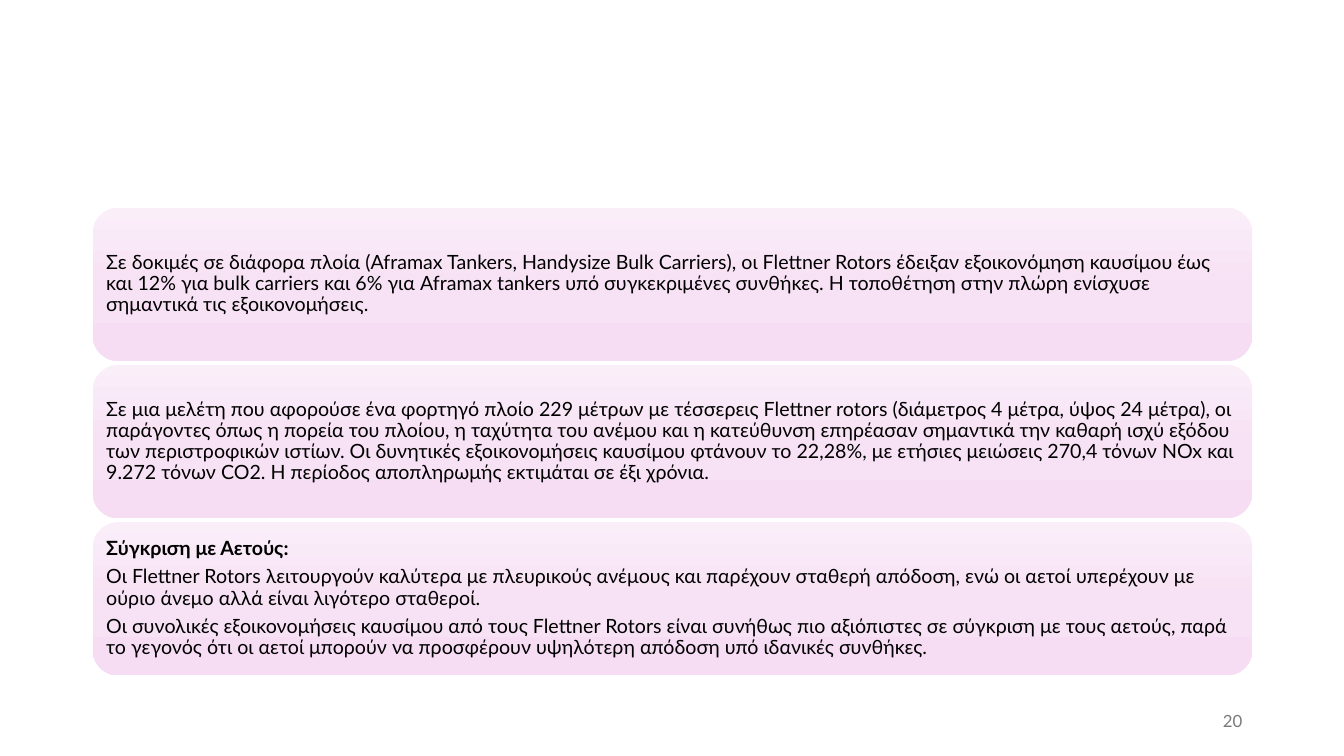
from copy import deepcopy

from pptx import Presentation
from pptx.dml.color import RGBColor
from pptx.enum.shapes import MSO_SHAPE
from pptx.enum.text import MSO_ANCHOR, PP_ALIGN
from pptx.oxml.ns import qn
from pptx.util import Inches, Pt

PANELS = [
    ["Σε δοκιμές σε διάφορα πλοία (Aframax Tankers, Handysize Bulk Carriers), οι Flettner Rotors "
     "έδειξαν εξοικονόμηση καυσίμου έως και 12% για bulk carriers και 6% για Aframax tankers υπό "
     "συγκεκριμένες συνθήκες. Η τοποθέτηση στην πλώρη ενίσχυσε σημαντικά τις εξοικονομήσεις."],
    ["Σε μια μελέτη που αφορούσε ένα φορτηγό πλοίο 229 μέτρων με τέσσερεις Flettner rotors "
     "(διάμετρος 4 μέτρα, ύψος 24 μέτρα), οι παράγοντες όπως η πορεία του πλοίου, η ταχύτητα του "
     "ανέμου και η κατεύθυνση επηρέασαν σημαντικά την καθαρή ισχύ εξόδου των περιστροφικών ιστίων. "
     "Οι δυνητικές εξοικονομήσεις καυσίμου φτάνουν το 22,28%, με ετήσιες μειώσεις 270,4 τόνων NOx "
     "και 9.272 τόνων CO2. Η περίοδος αποπληρωμής εκτιμάται σε έξι χρόνια."],
    ["Σύγκριση με Αετούς:",
     "Οι Flettner Rotors λειτουργούν καλύτερα με πλευρικούς ανέμους και παρέχουν σταθερή απόδοση, "
     "ενώ οι αετοί υπερέχουν με ούριο άνεμο αλλά είναι λιγότερο σταθεροί.",
     "Οι συνολικές εξοικονομήσεις καυσίμου από τους Flettner Rotors είναι συνήθως πιο αξιόπιστες "
     "σε σύγκριση με τους αετούς, παρά το γεγονός ότι οι αετοί μπορούν να προσφέρουν υψηλότερη "
     "απόδοση υπό ιδανικές συνθήκες."],
]


def rgb(value):
    return RGBColor.from_string(value)


class SlideBuilder:
    font = "Lato"
    gradient = [(0, "FAEEF9"), (0.5, "F7E1F4"), (1, "F6DDF4")]

    def __init__(self, s):
        self.s = s

    def style(self, p, size, color, bold=False):
        for r in p.runs:
            r.font.name = self.font
            r.font.size = Pt(size)
            r.font.bold = bold
            r.font.color.rgb = rgb(color)

    def fill_gradient(self, sp):
        sp.fill.gradient()
        sp.fill.gradient_angle = 270
        stops = sp._element.spPr.find(".//" + qn("a:gsLst"))
        stops.insert(1, deepcopy(stops[0]))
        for stop, (position, color) in zip(sp.fill.gradient_stops, self.gradient):
            stop.position = position
            stop.color.rgb = rgb(color)

    def panel(self, x, y, w, h, paragraphs):
        sp = self.s.shapes.add_shape(MSO_SHAPE.ROUNDED_RECTANGLE,
                                     Inches(x), Inches(y), Inches(w), Inches(h))
        sp.shadow.inherit = False
        sp.line.fill.background()
        self.fill_gradient(sp)
        tf = sp.text_frame
        tf.word_wrap = True
        tf.vertical_anchor = MSO_ANCHOR.MIDDLE
        tf.margin_left = tf.margin_right = tf.margin_top = tf.margin_bottom = Inches(0.06)
        tf.text = "\n".join(paragraphs)
        for i, p in enumerate(tf.paragraphs):
            p.alignment = PP_ALIGN.LEFT
            p.line_spacing = 0.9
            p.space_after = Pt(5)
            # The first of several paragraphs is a heading
            self.style(p, 14, "000000", bold=i == 0 and len(paragraphs) > 1)

    def page_number(self, x, y, w, h, number):
        tf = self.s.shapes.add_textbox(Inches(x), Inches(y), Inches(w), Inches(h)).text_frame
        tf.word_wrap = True
        tf.vertical_anchor = MSO_ANCHOR.MIDDLE
        tf.text = str(number)
        p = tf.paragraphs[0]
        p.alignment = PP_ALIGN.RIGHT
        self.style(p, 12, "797979")


def main():
    prs = Presentation()
    prs.slide_width = Inches(13.33)
    prs.slide_height = Inches(7.5)
    # Blank layout: the slide shows no title
    slide = SlideBuilder(prs.slides.add_slide(prs.slide_layouts[6]))

    # Stacked panels
    for i, paragraphs in enumerate(PANELS):
        slide.panel(0.92, 2.06 + 1.56 * i, 11.5, 1.52, paragraphs)

    # Footer
    slide.page_number(9.42, 6.95, 3, 0.4, 20)
    prs.save("out.pptx")


if __name__ == "__main__":
    main()
